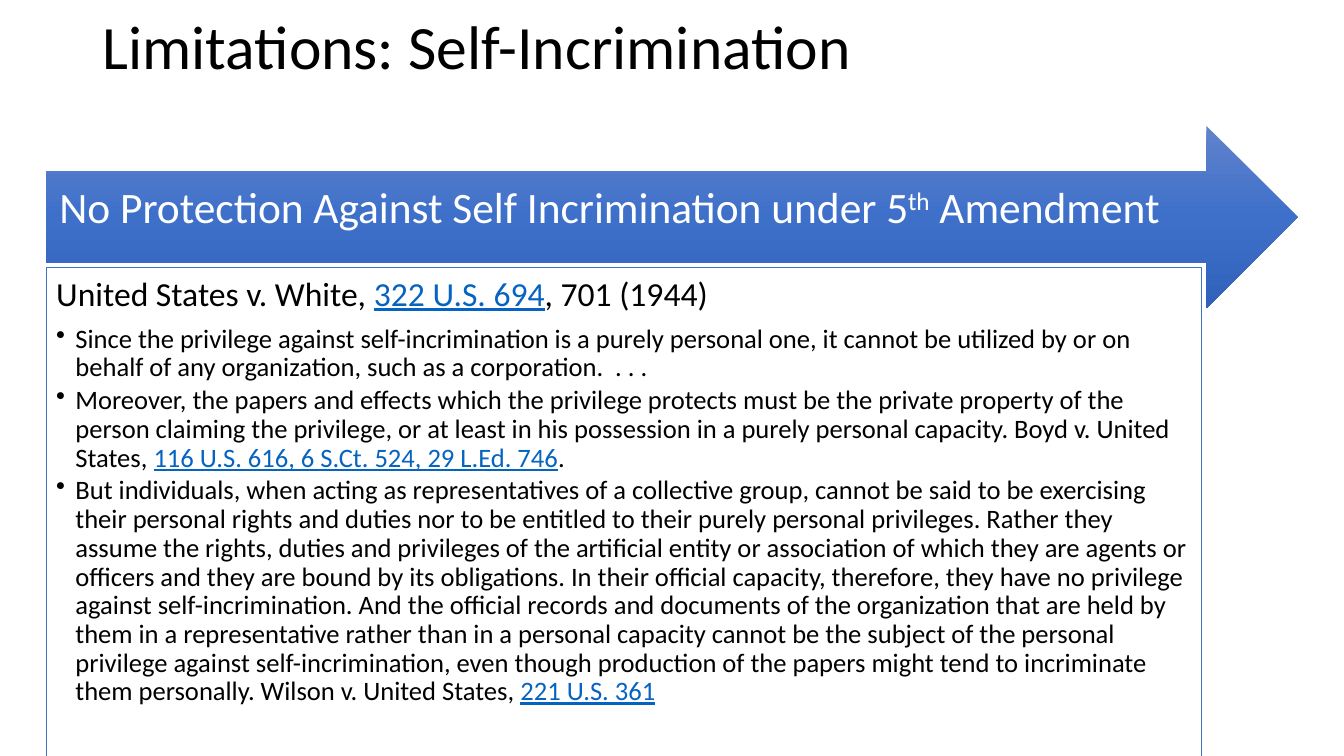
from dataclasses import dataclass

from lxml.etree import SubElement
from pptx import Presentation
from pptx.dml.color import RGBColor
from pptx.enum.shapes import MSO_SHAPE
from pptx.enum.text import MSO_ANCHOR
from pptx.oxml.ns import qn
from pptx.util import Inches, Pt


@dataclass(frozen=True)
class Theme:
    face: str = "Calibri"
    ink: str = "000000"
    paper: str = "FFFFFF"
    link: str = "0563C1"
    edge: str = "4472C4"
    fade: tuple = ((0, "6183CB"), (50, "3E70CA"), (100, "3062BB"))
    title: int = 44
    banner: int = 31
    head: int = 24
    body: int = 19


class Page:
    def __init__(self, deck, theme):
        self.theme = theme
        self.slide = deck.slides.add_slide(deck.slide_layouts[6])

    def frame(self, shape, anchor, pads):
        frame = shape.text_frame
        sides = ("margin_left", "margin_top", "margin_right", "margin_bottom")
        format = {"word_wrap": True, "vertical_anchor": anchor}
        format.update(zip(sides, map(Inches, pads)))
        for key, value in format.items():
            setattr(frame, key, value)
        return frame

    def label(self, box):
        shape = self.slide.shapes.add_textbox(*map(Inches, box))
        return self.frame(shape, MSO_ANCHOR.MIDDLE, (0.1, 0.05, 0.1, 0.05))

    def arrow(self, box, pads):
        shape = self.slide.shapes.add_shape(MSO_SHAPE.RIGHT_ARROW, *map(Inches, box))
        shape.shadow.inherit = False
        shape.line.fill.background()
        # Three stops, running from top to bottom
        shape.fill.gradient()
        grad = shape.fill._fill._gradFill
        stops = grad.find(qn("a:gsLst"))
        for stop in list(stops):
            stops.remove(stop)
        for place, color in self.theme.fade:
            stop = SubElement(stops, qn("a:gs"), pos=str(place * 1000))
            SubElement(stop, qn("a:srgbClr"), val=color)
        grad.find(qn("a:lin")).set("ang", "5400000")
        return self.frame(shape, MSO_ANCHOR.MIDDLE, pads)

    def panel(self, box):
        shape = self.slide.shapes.add_shape(MSO_SHAPE.RECTANGLE, *map(Inches, box))
        shape.shadow.inherit = False
        shape.fill.solid()
        shape.fill.fore_color.rgb = RGBColor.from_string(self.theme.paper)
        shape.line.color.rgb = RGBColor.from_string(self.theme.edge)
        shape.line.width = Pt(0.5)
        return self.frame(shape, MSO_ANCHOR.TOP, (0.1,) * 4)

    def para(self, frame, runs, size, color, after=0, bullet=False):
        """Add a paragraph; each run is (words, kind), kind "", "link" or "super"."""
        first = frame.paragraphs[0]
        para = frame.add_paragraph() if first.runs else first
        if bullet:
            props = para._p.get_or_add_pPr()
            props.set("marL", str(Inches(0.19)))
            props.set("indent", str(Inches(-0.19)))
            SubElement(props, qn("a:buChar"), char="•")
        format = {"alignment": 1, "line_spacing": 0.9, "space_after": Pt(size * after)}
        for key, value in format.items():
            setattr(para, key, value)
        for words, kind in runs:
            run = para.add_run()
            run.text = words
            link = kind == "link"
            font = {"name": self.theme.face, "size": Pt(size), "underline": link}
            for key, value in font.items():
                setattr(run.font, key, value)
            tint = self.theme.link if link else color
            run.font.color.rgb = RGBColor.from_string(tint)
            if kind == "super":
                run._r.get_or_add_rPr().set("baseline", "30000")


CASE = [("United States v. White, ", ""), ("322 U.S. 694", "link"), (", 701 (1944)", "")]
POINTS = [
    [("Since the privilege against self-incrimination is a purely personal one, "
      "it cannot be utilized by or on behalf of any organization, such as a "
      "corporation.  . . .", "")],
    [("Moreover, the papers and effects which the privilege protects must be the "
      "private property of the person claiming the privilege, or at least in his "
      "possession in a purely personal capacity. Boyd v. United States, ", ""),
     ("116 U.S. 616, 6 S.Ct. 524, 29 L.Ed. 746", "link"), (".", "")],
    [("But individuals, when acting as representatives of a collective group, "
      "cannot be said to be exercising their personal rights and duties nor to be "
      "entitled to their purely personal privileges. Rather they assume the rights, "
      "duties and privileges of the artificial entity or association of which they "
      "are agents or officers and they are bound by its obligations. In their "
      "official capacity, therefore, they have no privilege against "
      "self-incrimination. And the official records and documents of the "
      "organization that are held by them in a representative rather than in a "
      "personal capacity cannot be the subject of the personal privilege against "
      "self-incrimination, even though production of the papers might tend to "
      "incriminate them personally. Wilson v. United States, ", ""),
     ("221 U.S. 361", "link")],
]


def main():
    deck = Presentation()
    deck.slide_width, deck.slide_height = Inches(13.33), Inches(7.5)
    theme = Theme()
    page = Page(deck, theme)

    # Title
    title = page.label((0.92, 0, 11.5, 0.98))
    page.para(title, [("Limitations: Self-Incrimination", "")], theme.title, theme.ink)

    # Arrow banner
    banner = page.arrow((0.46, 1.25, 12.41, 1.81), (0.13, 0.13, 0.28, 0.29))
    rule = [("No Protection Against Self Incrimination under 5", ""),
            ("th", "super"), (" Amendment", "")]
    page.para(banner, rule, theme.banner, theme.paper, 0.35)

    # Case panel
    panel = page.panel((0.46, 2.65, 11.46, 4.85))
    page.para(panel, CASE, theme.head, theme.ink, 0.35)
    for point in POINTS:
        page.para(panel, point, theme.body, theme.ink, 0.15, bullet=True)

    deck.save("out.pptx")


if __name__ == "__main__":
    main()
